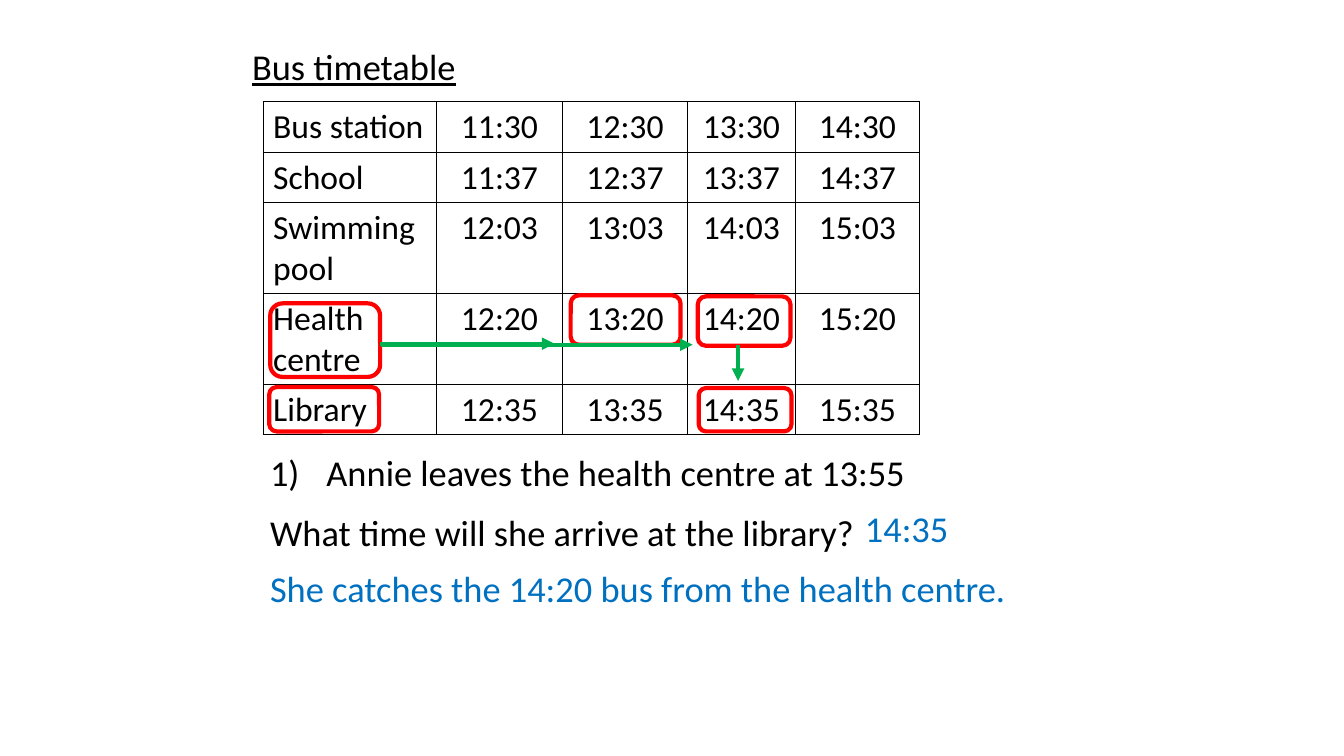
from lxml import etree
from pptx import Presentation
from pptx.dml.color import RGBColor
from pptx.enum.shapes import MSO_CONNECTOR, MSO_SHAPE
from pptx.enum.text import MSO_ANCHOR, MSO_AUTO_SIZE, PP_ALIGN
from pptx.oxml.ns import qn
from pptx.util import Inches, Pt

STRAIGHT = MSO_CONNECTOR.STRAIGHT
ROUNDED = MSO_SHAPE.ROUNDED_RECTANGLE
TOP = MSO_ANCHOR.TOP
FIT_SHAPE = MSO_AUTO_SIZE.SHAPE_TO_FIT_TEXT
LEFT, CENTER = PP_ALIGN.LEFT, PP_ALIGN.CENTER

FONT = "Calibri"
COLORS = {"text": "000000", "answer": "0070C0", "ring": "FF0000", "arrow": "00B050"}
TITLE_ONLY_LAYOUT = 5

TIMETABLE = [
    ("Bus station", "11:30", "12:30", "13:30", "14:30"),
    ("School", "11:37", "12:37", "13:37", "14:37"),
    ("Swimming pool", "12:03", "13:03", "14:03", "15:03"),
    ("Health centre", "12:20", "13:20", "14:20", "15:20"),
    ("Library", "12:35", "13:35", "14:35", "15:35"),
]
COLUMN_WIDTHS = [1.72, 1.25, 1.24, 1.07, 1.23]
ROW_HEIGHTS = [0.5, 0.5, 0.9, 0.9, 0.5]
TIMETABLE_BOX = (2.61, 1.01, 6.51, 3.3)

# Rings and arrows are offsets from the timetable's top left corner.
RINGS = [
    (0.07, 2.0, 1.09, 0.73),   # Health centre
    (3.05, 1.92, 1.09, 0.49),  # 13:20
    (4.31, 1.93, 0.92, 0.49),  # 14:20
    (4.32, 2.84, 0.92, 0.43),  # 14:35
    (0.06, 2.83, 1.09, 0.44),  # Library
]
ARROWS = [
    (1.16, 2.4, 2.89, 2.4),
    (4.71, 2.41, 4.71, 2.77),
    (1.17, 2.41, 4.26, 2.41),
]


def rgb(name):
    return RGBColor.from_string(COLORS[name])


def write_paragraph(paragraph, text, size, color="text", align=LEFT):
    paragraph.text = text
    paragraph.alignment = align
    font = paragraph.runs[0].font
    font.name, font.size = FONT, Pt(size)
    font.color.rgb = rgb(color)
    return font


def set_title(slide, box):
    title = slide.shapes.title
    title.left, title.top, title.width, title.height = map(Inches, box)
    frame = title.text_frame
    frame.word_wrap = False
    frame.auto_size = FIT_SHAPE
    frame.vertical_anchor = TOP
    write_paragraph(frame.paragraphs[0], "Bus timetable", 26).underline = True


def border_cell(cell):
    properties = cell._tc.get_or_add_tcPr()
    for side in ("lnL", "lnR", "lnT", "lnB"):
        line = etree.SubElement(properties, qn(f"a:{side}"), w=str(Pt(1)))
        fill = etree.SubElement(line, qn("a:solidFill"))
        etree.SubElement(fill, qn("a:srgbClr"), val=COLORS["text"])


def add_timetable(slide, box):
    table = slide.shapes.add_table(
        len(ROW_HEIGHTS), len(COLUMN_WIDTHS), *map(Inches, box)).table
    table.first_row = table.horz_banding = False
    for column, width in zip(table.columns, COLUMN_WIDTHS):
        column.width = Inches(width)
    for row, height, entries in zip(table.rows, ROW_HEIGHTS, TIMETABLE):
        row.height = Inches(height)
        for index, (cell, entry) in enumerate(zip(row.cells, entries)):
            border_cell(cell)
            cell.fill.background()
            write_paragraph(cell.text_frame.paragraphs[0], entry, 24,
                            align=CENTER if index else LEFT)


def add_ring(slide, box):
    ring = slide.shapes.add_shape(ROUNDED, *map(Inches, box))
    ring.shadow.inherit = False
    ring.fill.background()
    ring.line.color.rgb = rgb("ring")
    ring.line.width = Pt(3)


def add_arrow(slide, ends):
    arrow = slide.shapes.add_connector(STRAIGHT, *map(Inches, ends))
    arrow.line.color.rgb = rgb("arrow")
    arrow.line.width = Pt(3)
    etree.SubElement(arrow.line._get_or_add_ln(), qn("a:tailEnd"), type="triangle")
    etree.SubElement(arrow._element.spPr, qn("a:effectLst"))


def add_route(slide, box):
    """Mark the journey across the timetable with rings and arrows."""
    left, top = box[:2]
    for x, y, width, height in RINGS:
        add_ring(slide, (left + x, top + y, width, height))
    for x1, y1, x2, y2 in ARROWS:
        add_arrow(slide, (left + x1, top + y1, left + x2, top + y2))


def add_line_of_text(slide, box, text, color="text"):
    frame = slide.shapes.add_textbox(*map(Inches, box)).text_frame
    frame.word_wrap = False
    frame.auto_size = FIT_SHAPE
    paragraph = frame.paragraphs[0]
    write_paragraph(paragraph, text, 26, color)
    return paragraph


def number_paragraph(paragraph):
    properties = paragraph._p.get_or_add_pPr()
    indent = Inches(0.56)
    properties.set("marL", str(indent))
    properties.set("indent", str(-indent))
    etree.SubElement(properties, qn("a:buFont"), typeface="+mj-lt")
    etree.SubElement(properties, qn("a:buAutoNum"), type="arabicParenR")


def add_question(slide, left, top):
    height = 0.54
    statement = add_line_of_text(slide, (left, top, 6.56, height),
                                 "Annie leaves the health centre at 13:55")
    number_paragraph(statement)
    add_line_of_text(slide, (left, top + 0.59, 6.06, height),
                     "What time will she arrive at the library?")
    add_line_of_text(slide, (left + 5.9, top + 0.55, 1.04, height), "14:35", "answer")
    add_line_of_text(slide, (left, top + 1.15, 7.56, height),
                     "She catches the 14:20 bus from the health centre.", "answer")


def main():
    presentation = Presentation()
    presentation.slide_width = Inches(13.33)
    presentation.slide_height = Inches(7.5)
    slide = presentation.slides.add_slide(
        presentation.slide_layouts[TITLE_ONLY_LAYOUT])
    set_title(slide, (2.4, 0.39, 2.24, 0.54))
    add_timetable(slide, TIMETABLE_BOX)
    add_route(slide, TIMETABLE_BOX)
    add_question(slide, 2.58, 4.42)
    presentation.save("out.pptx")


if __name__ == "__main__":
    main()
